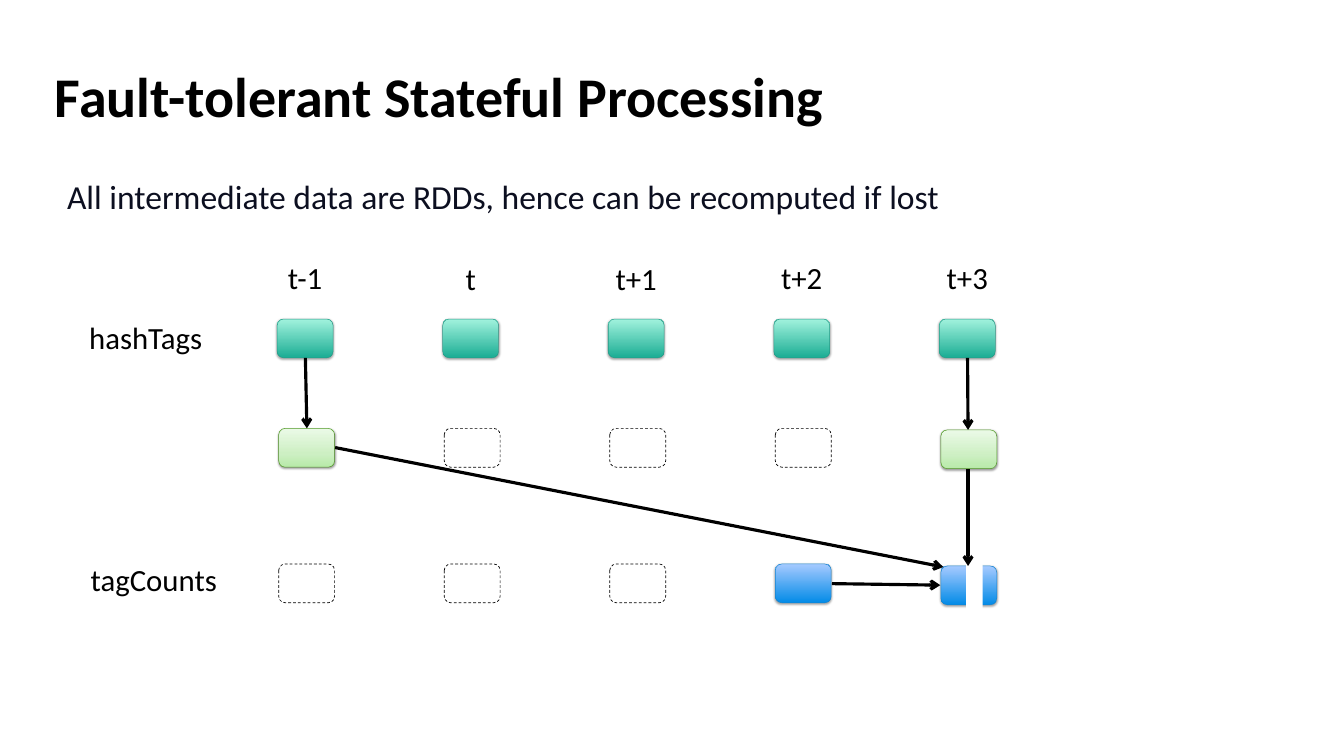
from dataclasses import dataclass

from pptx import Presentation
from pptx import util as u
from pptx.dml.color import RGBColor
from pptx.enum import dml, shapes, text
from pptx.oxml import parse_xml
from pptx.oxml import ns


@dataclass(frozen=True)
class Theme:
    """Colours, type sizes and line widths of the slide."""
    font: str = "Calibri"
    black: str = "000000"
    white: str = "FFFFFF"
    body: str = "0C0F20"
    title_size: int = 80
    body_size: int = 48
    label_size: int = 44
    thin: float = 0.75
    dashed: float = 1
    arrow: float = 4.5
    teal: tuple = ("289B88", ((0, "1BAD94"), (100, "A1F2DD")), 35, 1.8)
    green: tuple = ("529827", ((0, "B7EAA8"), (35, "CDEFC3"), (100, "EBFAE7")), 38, 1.6)
    blue: tuple = ("1884CD", ((0, "038BE7"), (100, "A6CAFF")), 35, 1.8)


T = Theme()
PITCH = 13.14 / 4
NODE = (1.11, 0.77)


def apply(obj, formats):
    """Set each named attribute of an object."""
    for name, value in formats.items():
        setattr(obj, name, value)


def add_xml(parent, xml):
    """Append a drawing element written as XML."""
    head, tail = xml.split(">", 1) if not xml.endswith("/>") or xml.count("<") > 1 else (xml[:-2], None)
    decl = " " + ns.nsdecls("a")
    parent.append(parse_xml(head + decl + ("/>" if tail is None else ">" + tail)))


def add_text(s, words, box, size, color=T.black, bold=False, align=None, insets=(0.1, 0.05), **frame):
    """Add a text box holding one line of text."""
    tf = s.shapes.add_textbox(*map(u.Inches, box)).text_frame
    x, y = map(u.Inches, insets)
    apply(tf, {"word_wrap": True, "margin_left": x, "margin_right": x,
               "margin_top": y, "margin_bottom": y, **frame})
    p = tf.paragraphs[0]
    p.alignment = align
    r = p.add_run()
    r.text = words
    apply(r.font, {"name": T.font, "size": u.Pt(size), "bold": bold})
    r.font.color.rgb = RGBColor.from_string(color)


def add_box(s, kind, x, y, w, h):
    """Add a white shape without a shadow."""
    sp = s.shapes.add_shape(kind, *map(u.Inches, (x, y, w, h)))
    sp.shadow.inherit = False
    sp.fill.solid()
    sp.fill.fore_color.rgb = RGBColor.from_string(T.white)
    sp.line.fill.background()
    return sp


def add_node(s, x, y, style=None):
    """Add a data node, dashed and empty unless a style is given."""
    sp = add_box(s, shapes.MSO_SHAPE.FLOWCHART_ALTERNATE_PROCESS, x, y, *NODE)
    outline = style[0] if style else T.black
    sp.line.color.rgb = RGBColor.from_string(outline)
    if not style:
        apply(sp.line, {"width": u.Pt(T.dashed), "dash_style": dml.MSO_LINE.DASH})
        return
    _, stops, opacity, distance = style
    sp.line.width = u.Pt(T.thin)
    sp.fill.gradient()
    sp.fill.gradient_angle = 90
    spPr = sp._element.spPr
    stop_list = spPr.find(".//" + ns.qn("a:gsLst"))
    for gs in list(stop_list):
        stop_list.remove(gs)
    for pos, color in stops:
        add_xml(stop_list, f'<a:gs pos="{pos * 1000}"><a:srgbClr val="{color}"/></a:gs>')
    add_xml(spPr.find(ns.qn("a:effectLst")),
            f'<a:outerShdw blurRad="{u.Pt(3.1)}" dist="{u.Pt(distance)}" dir="5400000" rotWithShape="0">'
            f'<a:srgbClr val="{T.black}"><a:alpha val="{opacity * 1000}"/></a:srgbClr></a:outerShdw>')


def add_arrow(s, *ends):
    """Add a straight arrow from the first point to the second."""
    c = s.shapes.add_connector(shapes.MSO_CONNECTOR.STRAIGHT, *map(u.Inches, ends))
    c.line.width = u.Pt(T.arrow)
    c.line.color.rgb = RGBColor.from_string(T.black)
    add_xml(c.line._get_or_add_ln(), '<a:tailEnd type="arrow"/>')
    add_xml(c._element.spPr, "<a:effectLst/>")


def main():
    """Build and save the slide."""
    prs = Presentation()
    apply(prs, {"slide_width": u.Inches(26.67), "slide_height": u.Inches(15)})
    s = prs.slides.add_slide(prs.slide_layouts[6])
    add_text(s, "Fault-tolerant Stateful Processing", (1.03, 1.01, 24.49, 1.74), T.title_size,
             bold=True, insets=(0.06, 0.06), vertical_anchor=text.MSO_ANCHOR.MIDDLE)
    add_text(s, "All intermediate data are RDDs, hence can be recomputed if lost",
             (1.33, 3.5, 24.95, 1.42), T.body_size, T.body, insets=(0, 0))
    grow = {"auto_size": text.MSO_AUTO_SIZE.SHAPE_TO_FIT_TEXT}
    for words, box in (("hashTags", (1.67, 6.27, 2.52, 0.84)), ("tagCounts", (1.7, 11.07, 2.75, 0.84))):
        add_text(s, words, box, T.label_size, word_wrap=False, **grow)
    times = (("t-1", 5.08), ("t", 5.1), ("t+1", 5.1), ("t+2", 5.08), ("t+3", 5.08))
    for i, (words, y) in enumerate(times):
        add_text(s, words, (5.3 + i * PITCH, y, 1.51, 0.86), T.label_size,
                 align=text.PP_ALIGN.CENTER, insets=(0, 0.05), **grow)
    rows = ((5.5, 6.33, 0, (T.teal,) * 5),
            (5.53, 8.5, 0.03, (T.green, None, None, None, T.green)),
            (5.53, 11.19, 0.04, (None, None, None, T.blue, T.blue)))
    for x, y, last_drop, styles in rows:
        for i, style in enumerate(styles):
            add_node(s, x + i * PITCH, y + (last_drop if i == 4 else 0), style)
    add_box(s, shapes.MSO_SHAPE.RECTANGLE, 19.17, 11.08, 0.33, 1)
    for ends in ((16.51, 11.58, 18.66, 11.61), (19.21, 9.31, 19.21, 11.23),
                 (6.65, 8.88, 18.72, 11.25), (19.2, 7.1, 19.21, 8.53), (6.06, 7.1, 6.09, 8.5)):
        add_arrow(s, *ends)
    prs.save("out.pptx")


if __name__ == "__main__":
    main()
